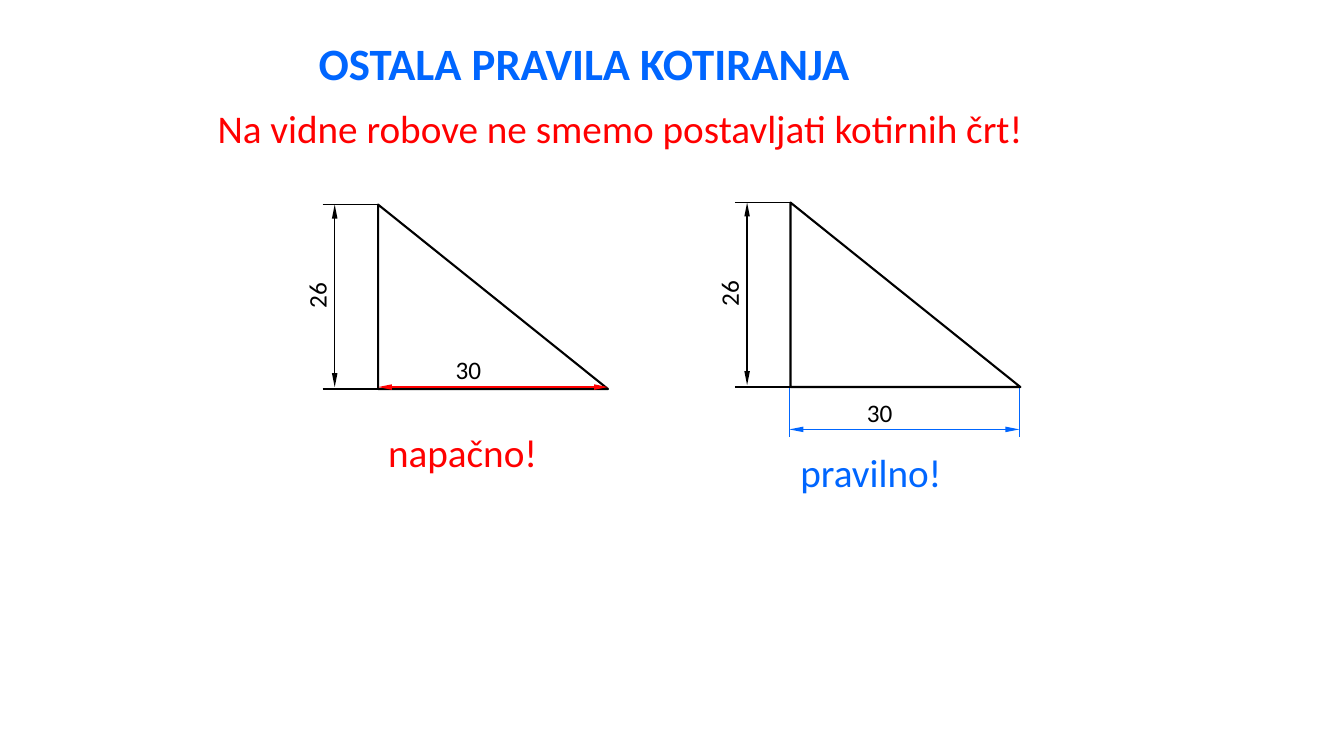
from dataclasses import dataclass

from lxml.etree import SubElement
from pptx import Presentation
from pptx.dml.color import RGBColor
from pptx.enum.shapes import MSO_CONNECTOR, MSO_SHAPE
from pptx.enum.text import MSO_ANCHOR, MSO_AUTO_SIZE, PP_ALIGN
from pptx.oxml.ns import qn
from pptx.util import Inches, Pt


@dataclass(frozen=True)
class Theme:
    font: str = "Calibri"
    black: RGBColor = RGBColor(0, 0, 0)
    white: RGBColor = RGBColor(255, 255, 255)
    blue: RGBColor = RGBColor(0, 0x66, 255)
    red: RGBColor = RGBColor(255, 0, 0)
    title_size: int = 32
    body_size: int = 28
    label_size: int = 18
    edge_width: float = 1.5
    line_width: float = 1


THEME = Theme()
TRIANGLE_WIDTH, TRIANGLE_HEIGHT = 2.28, 1.83


def apply_format(target, values):
    for name, value in values.items():
        setattr(target, name, value)


def place(box, left, top, width, height):
    apply_format(box, {"left": Inches(left), "top": Inches(top),
                       "width": Inches(width), "height": Inches(height)})


def write_text(box, text, size, color, bold=False, wrap=False):
    apply_format(box.text_frame, {
        "text": text, "word_wrap": wrap, "vertical_anchor": MSO_ANCHOR.TOP,
        "auto_size": MSO_AUTO_SIZE.SHAPE_TO_FIT_TEXT})
    para = box.text_frame.paragraphs[0]
    para.alignment = PP_ALIGN.LEFT
    span = para.runs[0]
    apply_format(span.font, {"name": THEME.font, "size": Pt(size), "bold": bold})
    span.font.color.rgb = color


def add_text(page, bounds, text, size, color, rotation=0):
    box = page.shapes.add_textbox(*map(Inches, bounds))
    write_text(box, text, size, color)
    box.rotation = rotation


def add_line(page, start, end, color, arrows=False):
    line = page.shapes.add_connector(
        MSO_CONNECTOR.STRAIGHT, *map(Inches, (*start, *end)))
    line.line.width = Pt(THEME.line_width)
    line.line.color.rgb = color
    if arrows:
        outline = line.line._get_or_add_ln()
        for tag in ("a:headEnd", "a:tailEnd"):
            SubElement(outline, qn(tag), type="triangle", w="sm", len="lg")
    SubElement(line._element.spPr, qn("a:effectLst"))


def add_triangle(page, left, top):
    triangle = page.shapes.add_shape(
        MSO_SHAPE.RIGHT_TRIANGLE,
        *map(Inches, (left, top, TRIANGLE_WIDTH, TRIANGLE_HEIGHT)))
    triangle.shadow.inherit = False
    triangle.fill.solid()
    triangle.fill.fore_color.rgb = THEME.white
    triangle.line.color.rgb = THEME.black
    triangle.line.width = Pt(THEME.edge_width)


def add_height_dimension(page, left, top):
    for y in (top, top + TRIANGLE_HEIGHT):
        add_line(page, (left - 0.55, y), (left, y), THEME.black)
    x = left - 0.43
    add_line(page, (x, top), (x, top + 1.81), THEME.black, arrows=True)
    add_text(page, (left - 0.85, top + 0.69, 0.48, 0.4), "26",
             THEME.label_size, THEME.black, rotation=270)


def add_width_dimension(page, left, y, label_left, color):
    add_line(page, (left, y), (left + TRIANGLE_WIDTH, y), color, arrows=True)
    add_text(page, (label_left, y - 0.37, 0.48, 0.4), "30",
             THEME.label_size, THEME.black)


def add_wrong_drawing(page, left, top):
    """Width dimension laid on the visible edge."""
    add_triangle(page, left, top)
    add_height_dimension(page, left, top)
    add_width_dimension(page, left, top + 1.81, left + 0.67, THEME.red)
    add_text(page, (left, 4.2, 1.82, 0.57), "napačno!",
             THEME.body_size, THEME.red)


def add_right_drawing(page, left, top):
    """Width dimension moved below the edge with extension lines."""
    edge = left - 0.01
    bottom = top + TRIANGLE_HEIGHT
    for x in (edge, edge + TRIANGLE_WIDTH):
        add_line(page, (x, bottom), (x, bottom + 0.5), THEME.blue)
    add_triangle(page, left, top)
    add_height_dimension(page, left, top)
    add_width_dimension(page, edge, bottom + 0.42, left + 0.66, THEME.blue)
    add_text(page, (left, 4.4, 1.69, 0.57), "pravilno!",
             THEME.body_size, THEME.blue)


def main():
    deck = Presentation()
    apply_format(deck, {"slide_width": Inches(13.33), "slide_height": Inches(7.5)})
    page = deck.slides.add_slide(deck.slide_layouts.get_by_name("Title Only"))
    title = page.shapes.title
    place(title, 3.06, 0.3, 6.92, 0.64)
    write_text(title, "OSTALA PRAVILA KOTIRANJA", THEME.title_size,
               THEME.blue, bold=True, wrap=True)
    add_text(page, (2.06, 0.99, 8.9, 0.57),
             "Na vidne robove ne smemo postavljati kotirnih črt!",
             THEME.body_size, THEME.red)
    add_wrong_drawing(page, 3.75, 2.03)
    add_right_drawing(page, 7.84, 2.01)
    deck.save("out.pptx")


if __name__ == "__main__":
    main()
